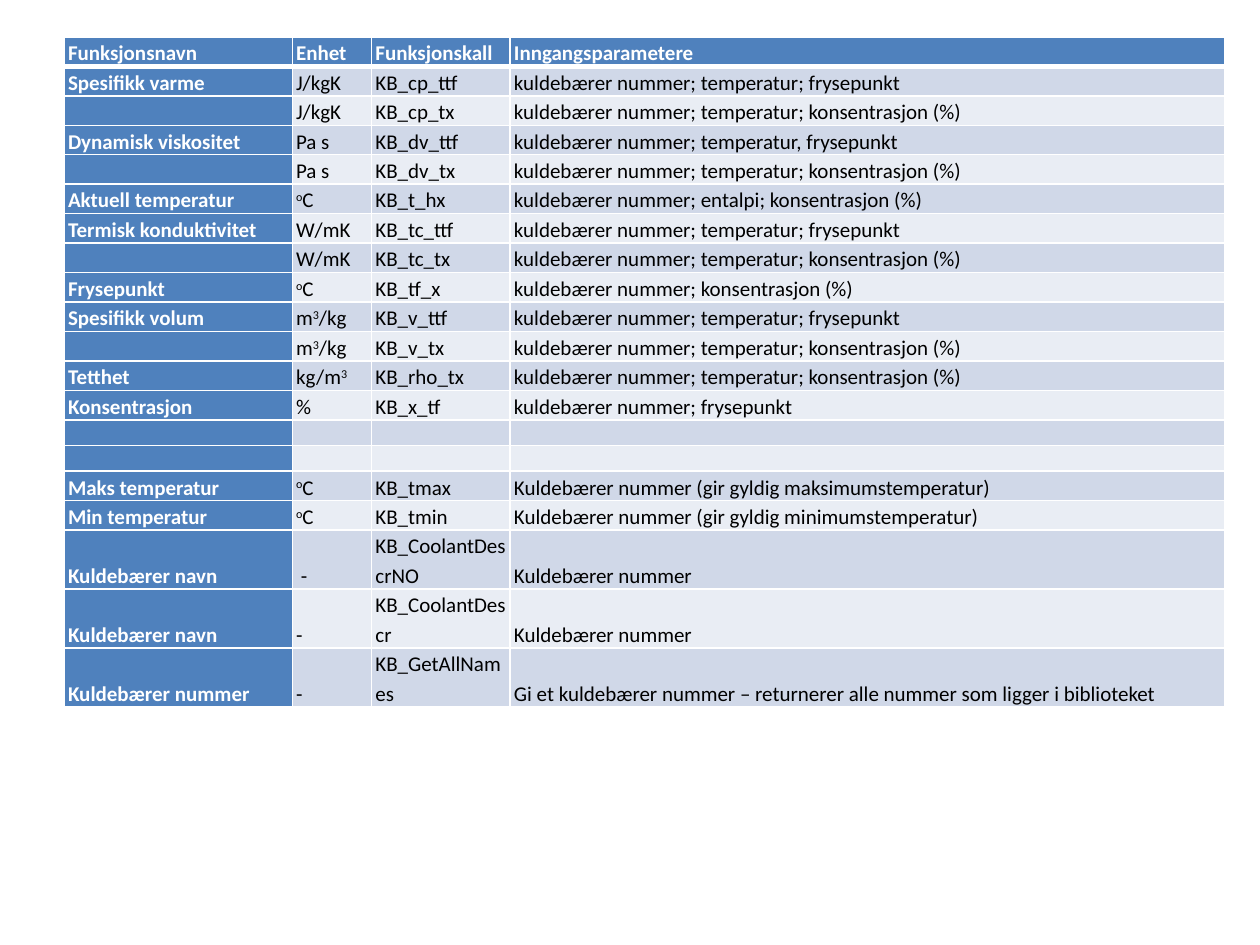
from dataclasses import dataclass

from lxml.etree import SubElement
from pptx import Presentation
from pptx.dml.color import RGBColor
from pptx.enum.text import MSO_ANCHOR
from pptx.oxml.ns import qn
from pptx.util import Inches, Pt


@dataclass(frozen=True)
class Theme:
    font: str = "Calibri"
    size: int = 12
    head: str = "4F81BD"
    bands: tuple = ("E9EDF4", "D0D8E8")
    light: str = "FFFFFF"
    dark: str = "000000"
    thin: int = 1
    thick: int = 3
    lead: float = 1.15


THEME = Theme()
WIDE, HIGH = Inches(10), Inches(7.5)
COL, ROW = WIDE / 100, HIGH / 100  # the slide is a grid of 100 by 100

BOX = (5.1, 3.9, 92.1, 67.2)
SPANS = (18.1, 6.3, 11, 56.7)
LOW, TALL = 2.67, 2.93
TALL_ROWS = (5, 8, 9)

FREEZE = "kuldebærer nummer; temperatur; frysepunkt"
MIX = "kuldebærer nummer; temperatur; konsentrasjon (%)"
COOLANT = "Kuldebærer nummer"

# Text between carets is raised.
ROWS = (
    ("Funksjonsnavn", "Enhet", "Funksjonskall", "Inngangsparametere"),
    ("Spesifikk varme", "J/kgK", "KB_cp_ttf", FREEZE),
    ("", "J/kgK", "KB_cp_tx", MIX),
    ("Dynamisk viskositet", "Pa s", "KB_dv_ttf",
     "kuldebærer nummer; temperatur, frysepunkt"),
    ("", "Pa s", "KB_dv_tx", MIX),
    ("Aktuell temperatur", "^o^C", "KB_t_hx",
     "kuldebærer nummer; entalpi; konsentrasjon (%)"),
    ("Termisk konduktivitet", "W/mK", "KB_tc_ttf", FREEZE),
    ("", "W/mK", "KB_tc_tx", MIX),
    ("Frysepunkt", "^o^C", "KB_tf_x", "kuldebærer nummer; konsentrasjon (%)"),
    ("Spesifikk volum", "m^3^/kg", "KB_v_ttf", FREEZE),
    ("", "m^3^/kg", "KB_v_tx", MIX),
    ("Tetthet", "kg/m^3^", "KB_rho_tx", MIX),
    ("Konsentrasjon", "%", "KB_x_tf", "kuldebærer nummer; frysepunkt"),
    ("", "", "", ""),
    ("", "", "", ""),
    ("Maks temperatur", "^o^C", "KB_tmax",
     "Kuldebærer nummer (gir gyldig maksimumstemperatur)"),
    ("Min temperatur", "^o^C", "KB_tmin",
     "Kuldebærer nummer (gir gyldig minimumstemperatur)"),
    ("Kuldebærer navn", " -", "KB_CoolantDescrNO ", COOLANT),
    ("Kuldebærer navn", "-", "KB_CoolantDescr", COOLANT),
    ("Kuldebærer nummer", "-", "KB_GetAllNames",
     "Gi et kuldebærer nummer – returnerer alle nummer som ligger i biblioteket"),
)


def edge(cell, row):
    """Draw white cell borders, thick between the head and the body."""
    props = cell._tc.get_or_add_tcPr()
    for side in "LRTB":
        broad = (row, side) in ((0, "B"), (1, "T"))
        width = Pt(THEME.thick if broad else THEME.thin)
        line = SubElement(props, qn(f"a:ln{side}"), w=str(width))
        fill = SubElement(line, qn("a:solidFill"))
        SubElement(fill, qn("a:srgbClr"), val=THEME.light)


def write(cell, text, strong):
    para = cell.text_frame.paragraphs[0]
    if not text:
        SubElement(para._p, qn("a:endParaRPr"), sz=str(THEME.size * 100))
        return
    para.line_spacing = THEME.lead
    style = {"name": THEME.font, "size": Pt(THEME.size), "bold": strong}
    for spot, part in enumerate(text.split("^")):
        if not part:
            continue
        run = para.add_run()
        run.text = part
        for key, value in style.items():
            setattr(run.font, key, value)
        tint = THEME.light if strong else THEME.dark
        run.font.color.rgb = RGBColor.from_string(tint)
        if spot % 2:
            run.font._element.set("baseline", "30000")


def paint(cell, text, row, col):
    strong = row == 0 or col == 0
    form = {
        "vertical_anchor": MSO_ANCHOR.BOTTOM,
        "margin_left": Inches(0.03),
        "margin_right": Inches(0.03),
        "margin_top": 0,
        "margin_bottom": 0,
    }
    for key, value in form.items():
        setattr(cell, key, value)
    edge(cell, row)
    cell.fill.solid()
    shade = THEME.head if strong else THEME.bands[row % 2]
    cell.fill.fore_color.rgb = RGBColor.from_string(shade)
    write(cell, text, strong)


def add_grid(slide, box):
    left, top, width, height = box
    frame = slide.shapes.add_table(
        len(ROWS), len(SPANS), int(left * COL), int(top * ROW),
        int(width * COL), int(height * ROW))
    table = frame.table
    table.horz_banding = False
    for col, span in zip(table.columns, SPANS):
        col.width = int(width * COL * span / sum(SPANS))
    for row, texts in enumerate(ROWS):
        rise = TALL if row in TALL_ROWS else LOW
        table.rows[row].height = int(rise * ROW)
        for col, text in enumerate(texts):
            paint(table.cell(row, col), text, row, col)
    frame.height = int(height * ROW)


def main():
    deck = Presentation()
    deck.slide_width, deck.slide_height = WIDE, HIGH
    slide = deck.slides.add_slide(deck.slide_layouts[6])
    add_grid(slide, BOX)
    deck.save("out.pptx")


if __name__ == "__main__":
    main()
